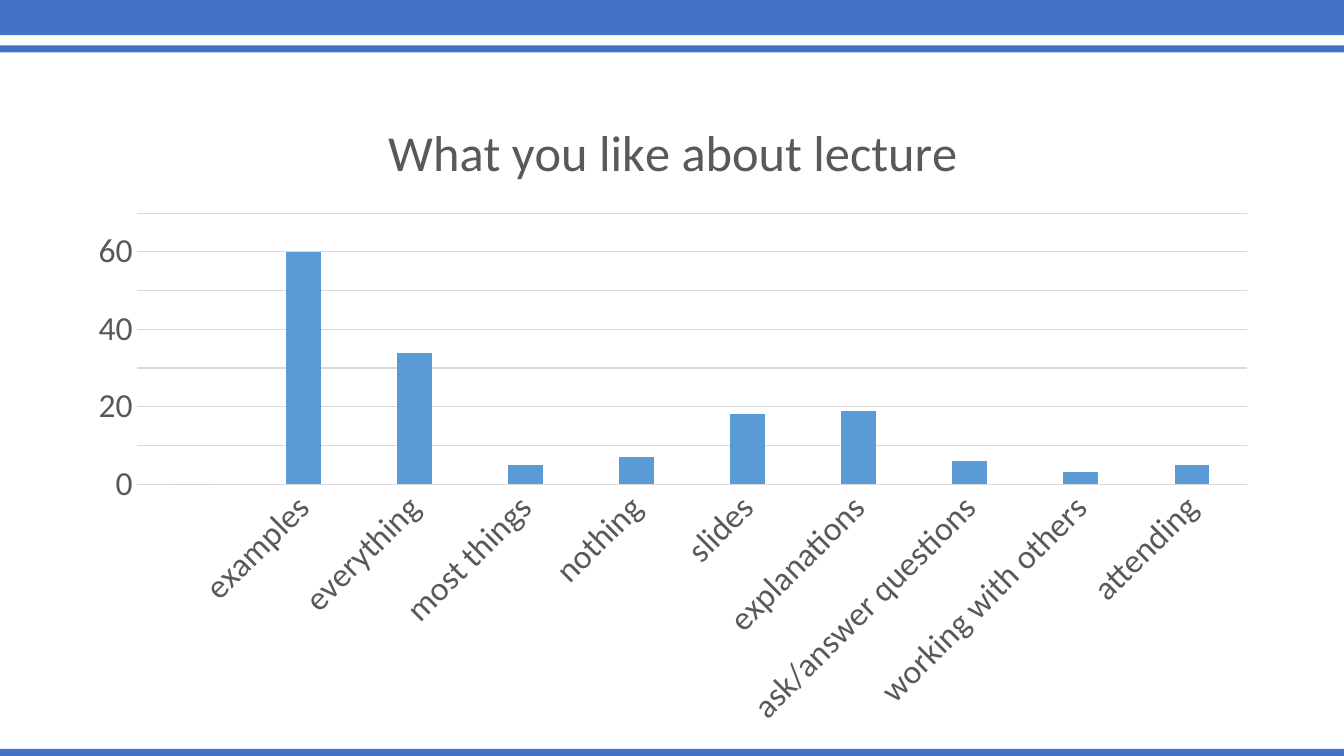
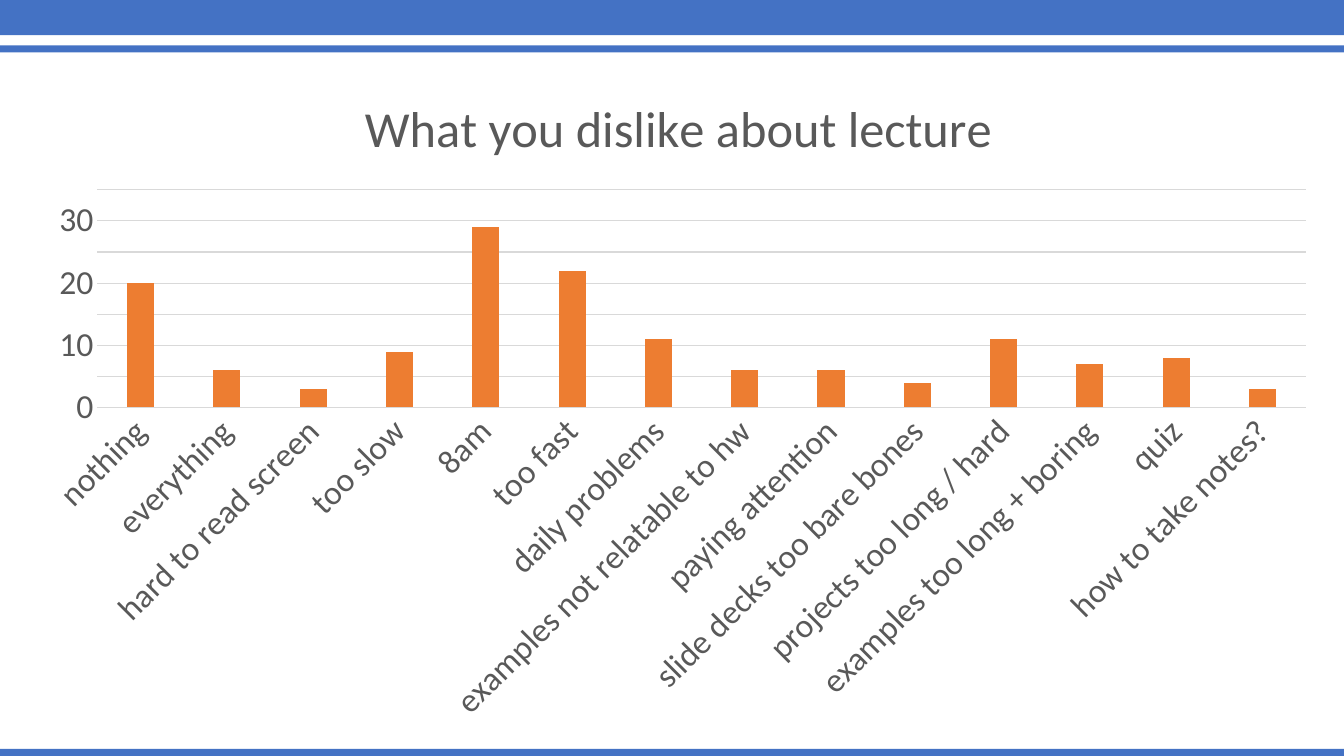
from pptx import Presentation
from pptx import util as u
from pptx.chart import data as chart_data
from pptx.dml import color
from pptx.enum import chart as chart_enum
from pptx.enum import shapes

COLORS = {"band": "4472C4", "text": "595959", "grid": "D9D9D9",
          "like": "5B9BD5", "dislike": "ED7D31"}
FONT = "Calibri"
WIDTH, HEIGHT = 13.33, 7.5
BANDS = [(0, 0.35), (0.45, 0.07), (HEIGHT - 0.07, 0.07)]

LIKES = [("", 0), ("examples", 60), ("everything", 34), ("most things", 5),
         ("nothing", 7), ("slides", 18), ("explanations", 19),
         ("ask/answer questions", 6), ("working with others", 3), ("attending", 5)]
DISLIKES = [("nothing", 20), ("everything", 6), ("hard to read screen", 3),
            ("too slow", 9), ("8am", 29), ("too fast", 22), ("daily problems", 11),
            ("examples not relatable to hw", 6), ("paying attention", 6),
            ("slide decks too bare bones", 4), ("projects too long / hard", 11),
            ("examples too long + boring", 7), ("quiz", 8), ("how to take notes?", 3)]


def rgb(name):
    """Return the named colour."""
    return color.RGBColor.from_string(COLORS[name])


def style_font(font, size=24, fill="text", bold=False):
    """Apply the shared typeface with the given format."""
    font.name, font.size, font.bold = FONT, u.Pt(size), bold
    font.color.rgb = rgb(fill)


def write_text(frame, content, **style):
    """Write one formatted run into a text frame."""
    run = frame.paragraphs[0].add_run()
    run.text = content
    style_font(run.font, **style)


def style_line(line):
    """Draw a thin grid-coloured line."""
    line.color.rgb = rgb("grid")
    line.width = u.Pt(0.75)


def add_bands(slide):
    """Draw the horizontal bands at the top and bottom of a slide."""
    for top, height in BANDS:
        band = slide.shapes.add_shape(shapes.MSO_SHAPE.RECTANGLE, 0, u.Inches(top),
                                      u.Inches(WIDTH), u.Inches(height))
        band.shadow.inherit = False
        band.fill.solid()
        band.fill.fore_color.rgb = rgb("band")
        band.line.fill.background()


def style_axes(chart, maximum, step):
    """Format both axes, with slanted category labels."""
    categories, values = chart.category_axis, chart.value_axis
    for axis in (categories, values):
        axis.major_tick_mark = axis.minor_tick_mark = chart_enum.XL_TICK_MARK.NONE
        style_font(axis.tick_labels.font)
    style_line(categories.format.line)
    body = categories._element.txPr.bodyPr
    body.set("rot", "-2700000")
    body.set("vert", "horz")
    values.format.line.fill.background()
    values.has_major_gridlines = True
    style_line(values.major_gridlines.format.line)
    values.minimum_scale, values.maximum_scale = 0, maximum
    values.major_unit = step


def add_column_chart(slide, box, title, answers, fill, maximum, step):
    """Place a titled column chart of the answers in the box."""
    names, counts = zip(*answers)
    data = chart_data.CategoryChartData()
    data.categories = names
    data.add_series("Series 1", counts)
    chart = slide.shapes.add_chart(chart_enum.XL_CHART_TYPE.COLUMN_CLUSTERED,
                                   *map(u.Inches, box), data).chart
    style_font(chart.font)
    chart.has_legend = False
    chart.has_title = True
    chart.chart_title.include_in_layout = False
    write_text(chart.chart_title.text_frame, title, size=36)
    plot = chart.plots[0]
    plot.vary_by_categories = False
    plot.gap_width, plot.overlap = 219, -27
    column_fill = plot.series[0].format.fill
    column_fill.solid()
    column_fill.fore_color.rgb = rgb(fill)
    style_axes(chart, maximum, step)


def add_survey_slide(presentation, **chart):
    """Add a banded slide holding one survey chart."""
    slide = presentation.slides.add_slide(presentation.slide_layouts[6])
    add_bands(slide)
    add_column_chart(slide, **chart)


def main():
    """Build and save the presentation."""
    presentation = Presentation()
    presentation.slide_width = u.Inches(WIDTH)
    presentation.slide_height = u.Inches(HEIGHT)
    add_survey_slide(presentation, box=(0.74, 0.89, 11.87, 6.45),
                     title="What you like about lecture",
                     answers=LIKES, fill="like", maximum=70, step=10)
    add_survey_slide(presentation, box=(0.25, 0.65, 12.96, 6.65),
                     title="What you dislike about lecture",
                     answers=DISLIKES, fill="dislike", maximum=35, step=5)
    presentation.save("out.pptx")


if __name__ == "__main__":
    main()
